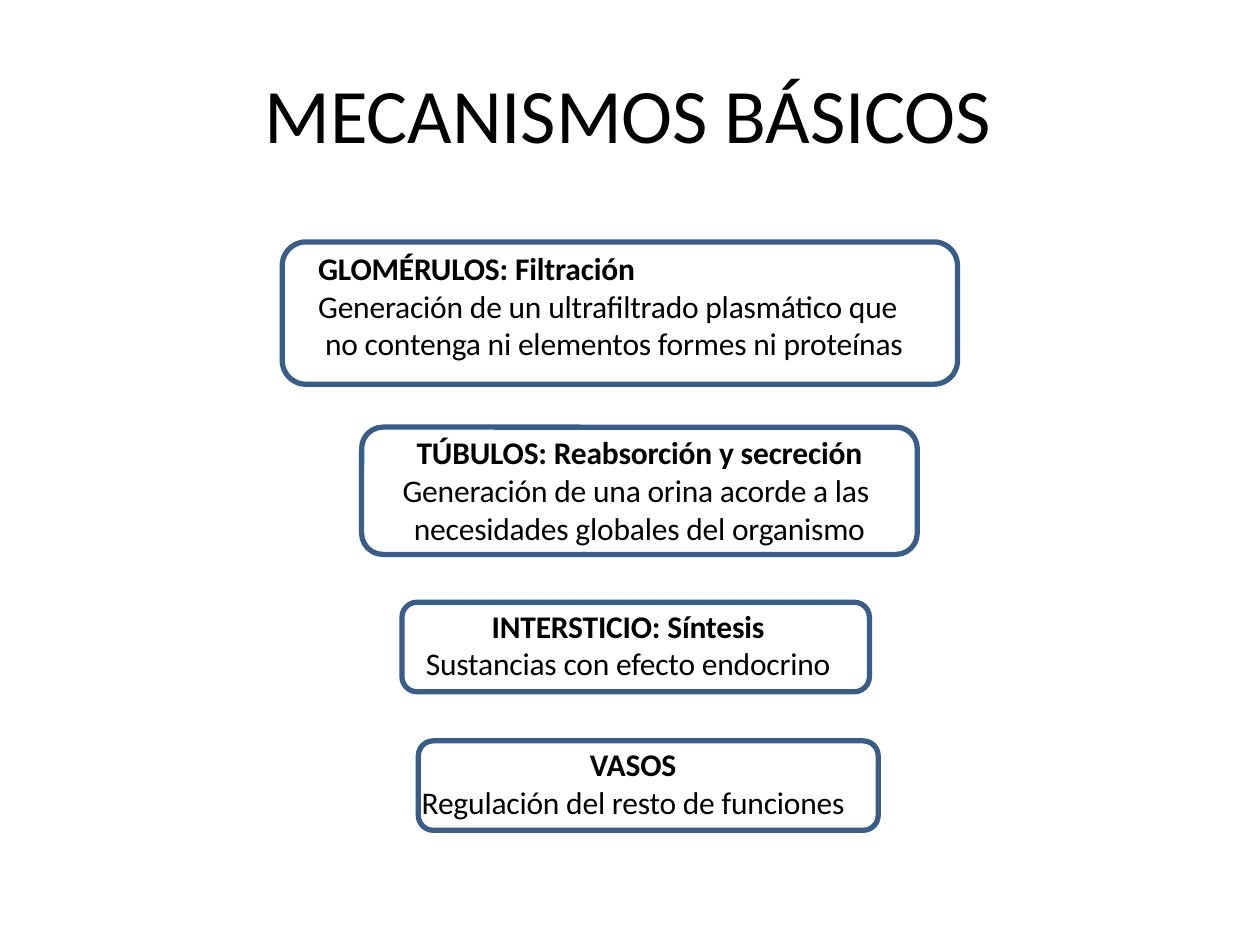
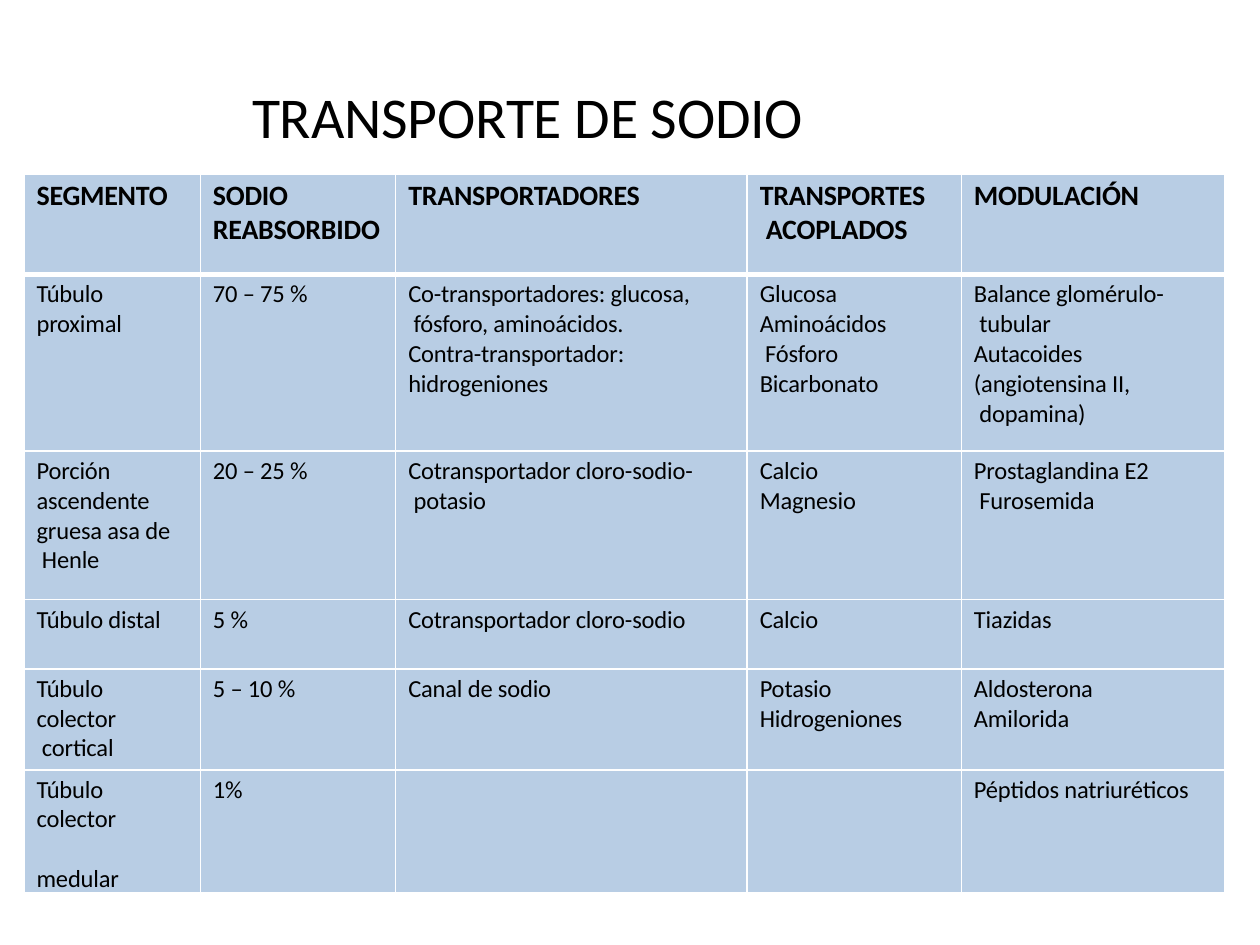
import pptx
import pptx.util
import pptx.dml.color
import pptx.enum.shapes
import pptx.enum.text
import pptx.oxml
import pptx.oxml.ns

Inches, Pt = pptx.util.Inches, pptx.util.Pt
ALIGN = pptx.enum.text.PP_ALIGN
ANCHOR = pptx.enum.text.MSO_ANCHOR

# Shared look
COLORS = {"text": "000000", "outline": "385D89", "cell": "B8CDE4", "border": "FFFFFF"}
FONT = "Calibri"
SPACING = -10  # hundredths of a point between letters

# Content: "\n" starts a paragraph, "\v" breaks a line
MECHANISMS = [
    # left, top, width, height, shift of the centred text (None: left-aligned), heading, body
    (2.24, 1.92, 5.36, 1.13, None, "GLOMÉRULOS: Filtración",
     "Generación de un ultrafiltrado plasmático que\v no contenga ni elementos formes ni proteínas"),
    (2.87, 3.39, 4.41, 1.01, 0, "TÚBULOS: Reabsorción y secreción",
     "Generación de una orina acorde a las \vnecesidades globales del organismo"),
    (3.19, 4.78, 3.71, 0.71, -0.06, "INTERSTICIO: Síntesis", "Sustancias con efecto endocrino"),
    (3.32, 5.88, 3.65, 0.71, -0.12, "VASOS", "Regulación del resto de funciones"),
]

COL_WIDTHS = [1.4, 1.55, 2.79, 1.7, 2.09]
ROW_HEIGHTS = [0.8, 1.4, 1.18, 0.55, 0.8, 0.8]
SODIUM = [
    ("SEGMENTO", "SODIO\vREABSORBIDO", "TRANSPORTADORES", "TRANSPORTES\v ACOPLADOS", "MODULACIÓN"),
    ("Túbulo\vproximal", "70 – 75 %",
     "Co-transportadores: glucosa,\v fósforo, aminoácidos.\nContra-transportador:\nhidrogeniones",
     "Glucosa\vAminoácidos\v Fósforo\vBicarbonato",
     "Balance glomérulo-\v tubular\nAutacoides\v(angiotensina II,\v dopamina)"),
    ("Porción\vascendente\vgruesa asa de\v Henle", "20 – 25 %",
     "Cotransportador cloro-sodio-\v potasio", "Calcio\vMagnesio", "Prostaglandina E2\v Furosemida"),
    ("Túbulo distal", "5 %", "Cotransportador cloro-sodio", "Calcio", "Tiazidas"),
    ("Túbulo\vcolector\v cortical", "5 – 10 %", "Canal de sodio",
     "Potasio\nHidrogeniones", "Aldosterona\nAmilorida"),
    ("Túbulo\vcolector\nmedular", "1%", "", "", "Péptidos natriuréticos"),
]
GAP_BEFORE = {"medular": 17}  # points above a paragraph set apart


def rgb(name):
    return pptx.dml.color.RGBColor.from_string(COLORS[name])


def set_margins(obj, left, top, right, bottom):
    obj.margin_left, obj.margin_top = Inches(left), Inches(top)
    obj.margin_right, obj.margin_bottom = Inches(right), Inches(bottom)


def style(p, size, bold=False):
    for r in p.runs:
        r.font.name, r.font.size, r.font.bold = FONT, Pt(size), bold
        r.font.color.rgb = rgb("text")
        r.font._element.set("spc", str(SPACING))


def add_title(s, text, size, left, top, width, height):
    tf = s.shapes.add_textbox(Inches(left), Inches(top), Inches(width), Inches(height)).text_frame
    tf.word_wrap = True
    tf.vertical_anchor = ANCHOR.MIDDLE
    set_margins(tf, 0.01, 0.01, 0, 0)
    tf.text = text
    style(tf.paragraphs[0], size)


def add_mechanism(s, left, top, width, height, shift, heading, body):
    sp = s.shapes.add_shape(pptx.enum.shapes.MSO_SHAPE.ROUNDED_RECTANGLE,
                            Inches(left), Inches(top), Inches(width), Inches(height))
    sp.shadow.inherit = False
    sp.fill.background()
    sp.line.color.rgb = rgb("outline")
    sp.line.width = Pt(3)
    tf = sp.text_frame
    tf.word_wrap = True
    tf.vertical_anchor = ANCHOR.TOP
    if shift is None:
        set_margins(tf, 0.23, 0, 0, 0)
    else:
        set_margins(tf, -0.1, 0, -0.1 - 2 * shift, 0)
    tf.text = heading + "\n" + body
    for i, p in enumerate(tf.paragraphs):
        p.alignment = ALIGN.LEFT if shift is None else ALIGN.CENTER
        style(p, 18, bold=i == 0)


def set_borders(cell, **widths):
    tcPr = cell._tc.get_or_add_tcPr()
    for i, (side, width) in enumerate(widths.items()):
        tcPr.insert(i, pptx.oxml.parse_xml(
            f'<a:ln{side} {pptx.oxml.ns.nsdecls("a")} w="{Pt(width)}"><a:solidFill>'
            f'<a:srgbClr val="{COLORS["border"]}"/></a:solidFill></a:ln{side}>'))


def add_sodium_table(s, left, top):
    table = s.shapes.add_table(len(SODIUM), len(COL_WIDTHS), Inches(left), Inches(top),
                               Inches(sum(COL_WIDTHS)), Inches(sum(ROW_HEIGHTS))).table
    for col, width in zip(table.columns, COL_WIDTHS):
        col.width = Inches(width)
    for i, (row, height) in enumerate(zip(SODIUM, ROW_HEIGHTS)):
        table.rows[i].height = Inches(height)
        for j, text in enumerate(row):
            cell = table.cell(i, j)
            set_margins(cell, 0.1, 0.04, 0, 0)
            cell.fill.solid()
            cell.fill.fore_color.rgb = rgb("cell")
            # A thick rule parts the header from the body
            set_borders(cell, L=1, R=1, T=3 if i == 1 else 1, B=3 if i == 0 else 1)
            cell.text_frame.text = text
            for k, p in enumerate(cell.text_frame.paragraphs):
                p.space_before = Pt(2.7 if k == 0 else GAP_BEFORE.get(p.text, 0))
                style(p, 16 if i == 0 else 14, bold=i == 0)


def main():
    prs = pptx.Presentation()
    prs.slide_width, prs.slide_height = Inches(10), Inches(7.5)
    blank = prs.slide_layouts[6]

    # Basic mechanisms
    s = prs.slides.add_slide(blank)
    add_title(s, "MECANISMOS BÁSICOS", 44, 2.09, 0.51, 5.82, 0.76)
    for mechanism in MECHANISMS:
        add_mechanism(s, *mechanism)

    # Sodium transport
    s = prs.slides.add_slide(blank)
    add_title(s, "TRANSPORTE DE SODIO", 33, 1.99, 0.6, 6.02, 0.63)
    add_sodium_table(s, 0.19, 1.38)

    prs.save("out.pptx")


if __name__ == "__main__":
    main()
